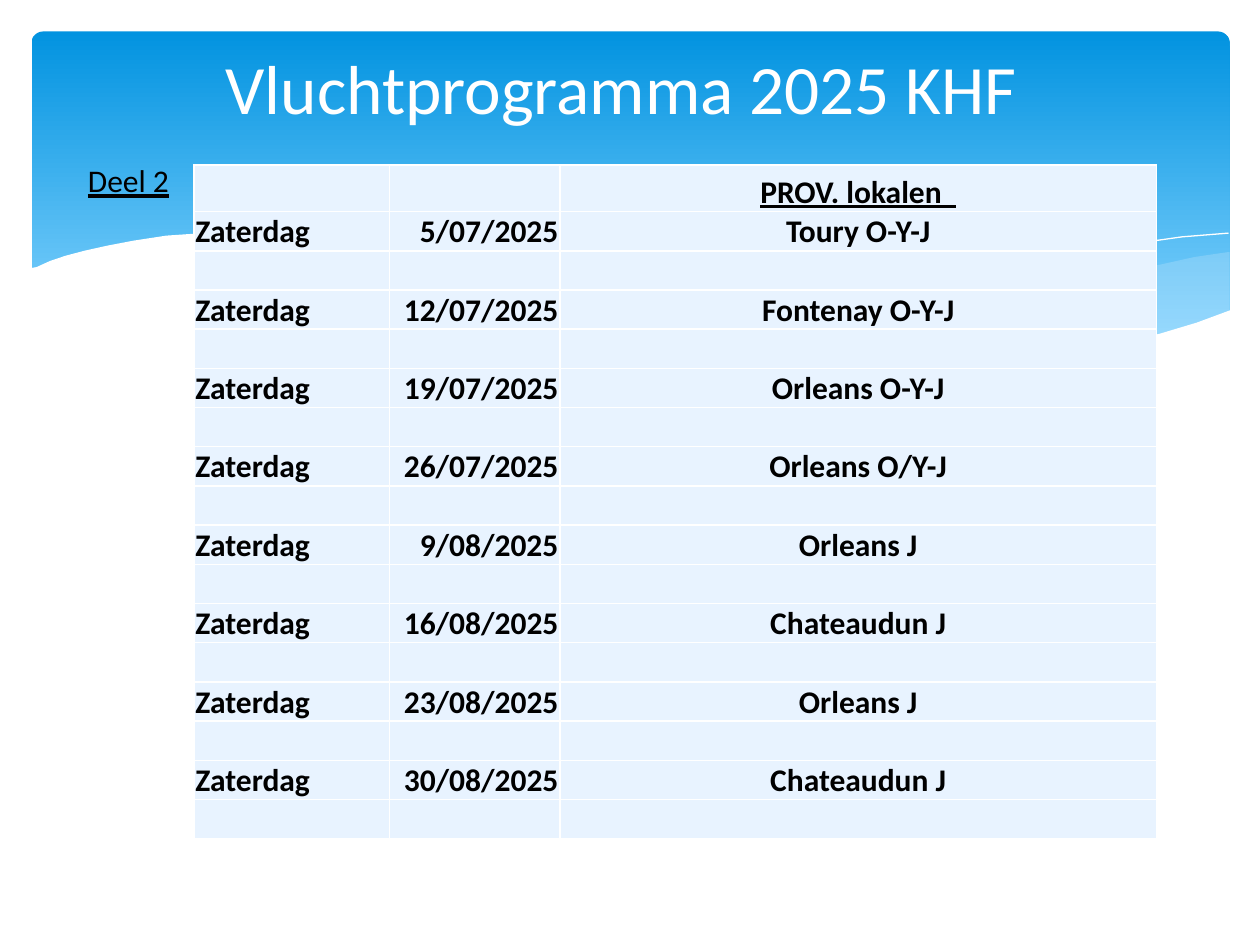
from lxml.etree import SubElement
from pptx import Presentation
from pptx.dml.color import RGBColor
from pptx.enum.shapes import MSO_SHAPE
from pptx.enum.text import MSO_ANCHOR, PP_ALIGN
from pptx.oxml import parse_xml
from pptx.oxml.ns import nsdecls, qn
from pptx.util import Inches, Pt

# The slide is a grid of 100 columns by 75 rows
CELL = Inches(0.1)
COLUMNS, ROWS = 100, 75
FONT = "Calibri"
WHITE, BLACK = "FFFFFF", "000000"
SKY, PALE_SKY, MIST, ICE = "0293E0", "83D3FE", "C6E7FC", "E8F3FF"

# Wave outlines as column and row offsets from the backdrop's corner
RIGHT_WAVE = [
    (95, 17.5), (92.3, 17.9), (89.6, 18.5), (86.6, 19.1), (83.6, 19.8),
    (80.5, 20.5), (75.4, 21.7), (70.4, 22.8), (65.8, 23.7), (63.6, 24),
    (68, 24.6), (72, 25), (75.6, 25.2), (78.9, 25.3), (82, 25.2),
    (84.9, 25.1), (87.2, 24.9), (89.7, 24.5), (92.1, 24), (94.2, 23.4),
    (95.1, 22.2), (95.1, 17.5)]
CENTRE_WAVE = [
    (86.8, 24.8), (84.1, 24.4), (78.2, 23.5), (71.6, 22.2), (64.3, 20.6),
    (60.4, 19.7), (57.3, 18.9), (53, 18), (48.9, 17.3), (44, 16.6),
    (39.5, 16.2), (35.5, 16), (31.9, 16.1), (28.4, 16.3), (26.1, 16.6),
    (31.7, 17.4), (35.8, 18.2), (39.7, 19.1), (42.4, 19.7), (46.6, 20.7),
    (54.1, 22.3), (58.8, 23.2), (63.5, 24), (68.4, 24.7), (72.3, 25.1),
    (76, 25.2), (79.3, 25.3), (82.3, 25.2), (85.1, 25), (86.8, 24.8)]
LONG_CURVE = [
    (28.4, 17), (30.3, 16.7), (32.8, 16.4), (36.2, 16.2), (39.1, 16.2),
    (42.5, 16.3), (46.4, 16.5), (50.8, 16.9), (55.7, 17.5), (61.1, 18.3),
    (67, 19.4), (73.5, 20.8), (80.6, 22.6), (88.2, 24.7)]
RISING_CURVE = [
    (58.8, 23.2), (62.8, 22.1), (67, 21), (72.3, 19.8), (78.1, 18.5),
    (84.1, 17.4), (88.5, 16.7), (91.3, 16.3), (95, 16)]
WHITE_WAVE = [
    (95.2, 22.1), (92.5, 23.1), (89.5, 24), (86.5, 24.6), (83.8, 24.9),
    (81.2, 25.1), (78.4, 25.2), (75.3, 25.1), (71.9, 24.9), (68.3, 24.5),
    (64.3, 24), (60.1, 23.3), (55.4, 22.5), (50.4, 21.4), (45, 20.2),
    (39.3, 18.8), (34, 17.7), (29.1, 16.9), (24.6, 16.3), (20.5, 16),
    (16.8, 15.9), (13.6, 16), (10.7, 16.2), (8.1, 16.6), (6, 17),
    (4.2, 17.4), (2.7, 17.8), (1.5, 18.2), (0.4, 18.7), (-0.2, 18.8),
    (-0.2, 30.4), (95.2, 30.4)]

FLIGHTS = [
    ("5/07/2025", "Toury O-Y-J"), ("12/07/2025", "Fontenay O-Y-J"),
    ("19/07/2025", "Orleans O-Y-J"), ("26/07/2025", "Orleans O/Y-J"),
    ("9/08/2025", "Orleans J"), ("16/08/2025", "Chateaudun J"),
    ("23/08/2025", "Orleans J"), ("30/08/2025", "Chateaudun J")]


def colour(code):
    return RGBColor.from_string(code)


def grid(*cells):
    """Turn counts of grid cells into lengths."""
    return [round(count * CELL) for count in cells]


def style(paragraph, size, code, align=PP_ALIGN.LEFT, bold=False, underline=False):
    paragraph.alignment = align
    font = paragraph.font
    font.name, font.size, font.bold, font.underline = FONT, Pt(size), bold, underline
    font.color.rgb = colour(code)


def draw_wave(slide, box, points, fill=None, opacity=100):
    """A filled wave, or an open white hairline when there is no fill."""
    start, *rest = [grid(box[0] + x, box[1] + y) for x, y in points]
    builder = slide.shapes.build_freeform(*start)
    builder.add_line_segments(rest, close=fill is not None)
    wave = builder.convert_to_shape()
    wave.shadow.inherit = False
    if fill is None:
        wave.fill.background()
        wave.line.color.rgb = colour(WHITE)
        wave.line.width = Pt(0)
        return
    wave.line.fill.background()
    wave.fill.solid()
    wave.fill.fore_color.rgb = colour(fill)
    if opacity < 100:
        tint = wave.element.spPr.find(qn("a:solidFill"))[0]
        SubElement(tint, qn("a:alpha"), val=str(opacity * 1000))


def add_backdrop(slide, box):
    sky = slide.shapes.add_shape(MSO_SHAPE.ROUNDED_RECTANGLE, *grid(*box))
    sky.adjustments[0] = 0.034
    sky.shadow.inherit = False
    sky.line.fill.background()
    sky.fill.gradient()
    sky.fill.gradient_angle = 270
    for stop, position, code in zip(sky.fill.gradient_stops, (0, 0.9), (SKY, PALE_SKY)):
        stop.position = position
        stop.color.rgb = colour(code)
    draw_wave(slide, box, RIGHT_WAVE, MIST, 29)
    draw_wave(slide, box, CENTRE_WAVE, MIST, 40)
    draw_wave(slide, box, LONG_CURVE)
    draw_wave(slide, box, RISING_CURVE)
    draw_wave(slide, box, WHITE_WAVE, WHITE)


def add_title(slide, box):
    title = slide.shapes.title
    title.left, title.top, title.width, title.height = grid(*box)
    frame = title.text_frame
    frame.text = "Vluchtprogramma 2025 KHF"
    frame.vertical_anchor = MSO_ANCHOR.TOP
    style(frame.paragraphs[0], 39.6, WHITE, PP_ALIGN.CENTER)
    # Bring the title in front of the backdrop
    title.element.getparent().append(title.element)


def add_part_label(slide, box):
    frame = slide.shapes.add_textbox(*grid(*box)).text_frame
    frame.word_wrap = True
    frame.text = "Deel 2"
    style(frame.paragraphs[0], 18, BLACK, underline=True)


def format_cell(cell, text, align, underline):
    cell.margin_left = cell.margin_right = cell.margin_top = Inches(0.01)
    cell.margin_bottom = 0
    cell.vertical_anchor = MSO_ANCHOR.BOTTOM
    cell.text = text
    style(cell.text_frame.paragraphs[0], 18, BLACK, align, True, underline)
    cell.fill.solid()
    cell.fill.fore_color.rgb = colour(ICE)
    # White borders, which come before the fill
    properties = cell._tc.get_or_add_tcPr()
    for index, side in enumerate("LRTB"):
        properties.insert(index, parse_xml(
            f'<a:ln{side} {nsdecls("a")} w="12700"><a:solidFill>'
            f'<a:srgbClr val="{WHITE}"/></a:solidFill></a:ln{side}>'))


def add_programme(slide, box):
    rows = [("", "", "PROV. lokalen  ")]
    for date, race in FLIGHTS:
        rows += [("Zaterdag", date, race), ("", "", "")]
    programme = slide.shapes.add_table(len(rows), 3, *grid(*box)).table
    for column, share in zip(programme.columns, (0.203, 0.177, 0.62)):
        column.width = grid(box[2] * share)[0]
    heading_height = 3.7
    row_height = (box[3] - heading_height) / (len(rows) - 1)
    aligns = (PP_ALIGN.LEFT, PP_ALIGN.RIGHT, PP_ALIGN.CENTER)
    for r, texts in enumerate(rows):
        programme.rows[r].height = grid(row_height if r else heading_height)[0]
        for c, (text, align) in enumerate(zip(texts, aligns)):
            format_cell(programme.cell(r, c), text, align, underline=r == 0)


def main():
    deck = Presentation()
    deck.slide_width, deck.slide_height = grid(COLUMNS, ROWS)
    slide = deck.slides.add_slide(deck.slide_layouts[5])
    add_backdrop(slide, (2.5, 2.5, 95.1, 27))
    add_title(slide, (4.3, 3.1, 90, 13.7))
    add_part_label(slide, (6, 12.3, 11, 4))
    add_programme(slide, (15.4, 13.1, 76.4, 53.5))
    deck.save("out.pptx")


if __name__ == "__main__":
    main()
